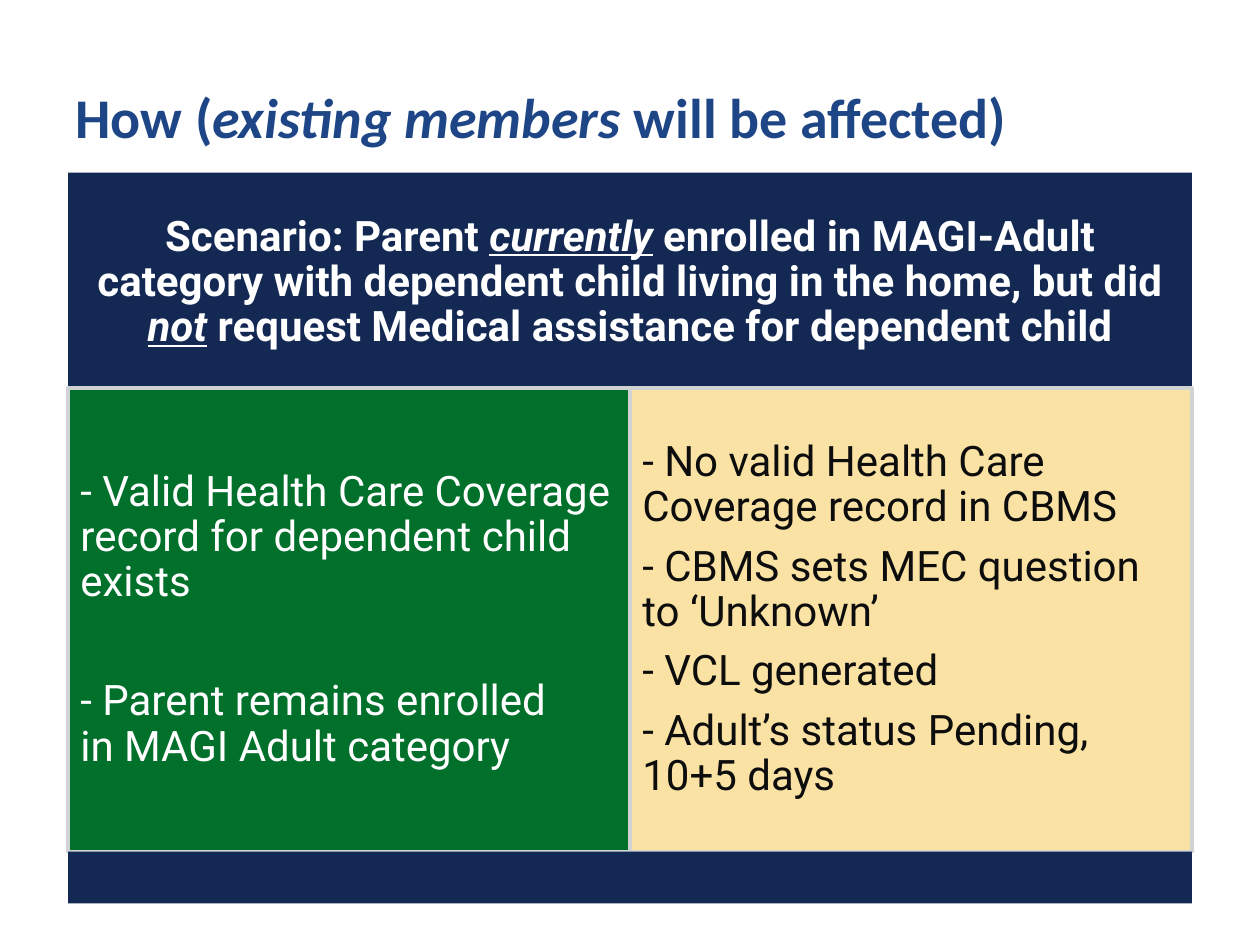
from pptx import Presentation
from pptx.dml.color import RGBColor
from pptx.enum.shapes import MSO_SHAPE
from pptx.enum.text import MSO_ANCHOR, PP_ALIGN
from pptx.util import Inches, Pt

COLORS = {
    "title": "1E4686", "navy": "132852", "green": "00702B", "sand": "F9E2A4",
    "border": "D0D2D3", "white": "FFFFFF", "ink": "0D0D0D",
}
COLUMNS, ROWS = 100, 75
LEFT, HALF = 5.4, 44.6
HEADER_TOP, PANEL_TOP, FOOTER_TOP = 13.7, 30.8, 67.6


def color(name):
    return RGBColor.from_string(COLORS[name])


class Slide:
    """Holds the page, its grid and the text style."""

    def __init__(self, deck):
        self.page = deck.slides.add_slide(deck.slide_layouts[6])
        self.column = deck.slide_width / COLUMNS
        self.row = deck.slide_height / ROWS

    def place(self, left, top, width, height):
        return (round(left * self.column), round(top * self.row),
                round(width * self.column), round(height * self.row))

    def add_text(self, shape, paragraphs, ink, font="Roboto", size=24, bold=False,
                 align=PP_ALIGN.LEFT, spacing=0.9, gap=0):
        """Fill a shape with paragraphs, each a list of (text, style letters) runs."""
        frame = shape.text_frame
        frame.word_wrap = True
        frame.vertical_anchor = MSO_ANCHOR.MIDDLE
        frame.margin_left = frame.margin_right = Inches(0.1)
        frame.margin_top = frame.margin_bottom = Inches(0.1)
        for index, runs in enumerate(paragraphs):
            para = frame.add_paragraph() if index else frame.paragraphs[0]
            para.alignment = align
            para.line_spacing = spacing
            para.space_before = Pt(gap if index else 0)
            for text, style in runs:
                if text == "\n":
                    para.add_line_break()
                    continue
                span = para.add_run()
                span.text = text
                span.font.name = font
                span.font.size = Pt(size)
                span.font.bold = bold
                span.font.italic = "i" in style
                span.font.underline = "u" in style
                span.font.color.rgb = color(ink)

    def title(self, runs, *area):
        box = self.page.shapes.add_textbox(*self.place(*area))
        self.add_text(box, [runs], "title", font="Calibri", size=32, bold=True, spacing=1.0)

    def block(self, fill, *area, border=None):
        shape = self.page.shapes.add_shape(MSO_SHAPE.RECTANGLE, *self.place(*area))
        shape.shadow.inherit = False
        shape.fill.solid()
        shape.fill.fore_color.rgb = color(fill)
        if border:
            shape.line.color.rgb = color(border)
            shape.line.width = Pt(2)
        else:
            shape.line.fill.background()
        return shape


def main():
    deck = Presentation()
    deck.slide_width, deck.slide_height = Inches(10), Inches(7.5)
    slide = Slide(deck)

    slide.title([("How (", ""), ("existing members ", "i"), ("will be affected)", "")],
                5, 3, 80.8, 12.5)

    header = slide.block("navy", LEFT, HEADER_TOP, 2 * HALF, 17.5)
    slide.add_text(header, [[
        ("Scenario: Parent ", ""), ("currently", "iu"),
        (" enrolled in MAGI-Adult category with dependent child living in the home, but did ", ""),
        ("not", "iu"), (" request Medical assistance for dependent child", ""),
    ]], "white", bold=True, align=PP_ALIGN.CENTER)

    panels = [
        ("green", "white", 42, [
            [("- Valid Health Care Coverage record for dependent child exists", "")],
            [("- Parent remains enrolled ", ""), ("\n", ""), ("in MAGI Adult category", "")],
        ]),
        ("sand", "ink", 8, [
            [("- No valid Health Care Coverage record in CBMS", "")],
            [("- CBMS sets MEC question to ‘Unknown’", "")],
            [("- VCL generated", "")],
            [("- Adult’s status Pending, 10+5 days", "")],
        ]),
    ]
    for index, (fill, ink, gap, paragraphs) in enumerate(panels):
        panel = slide.block(fill, LEFT + index * HALF, PANEL_TOP, HALF,
                            FOOTER_TOP - PANEL_TOP, border="border")
        slide.add_text(panel, paragraphs, ink, gap=gap)

    slide.block("navy", LEFT, FOOTER_TOP, 2 * HALF, 4.1)
    deck.save("out.pptx")


if __name__ == "__main__":
    main()
